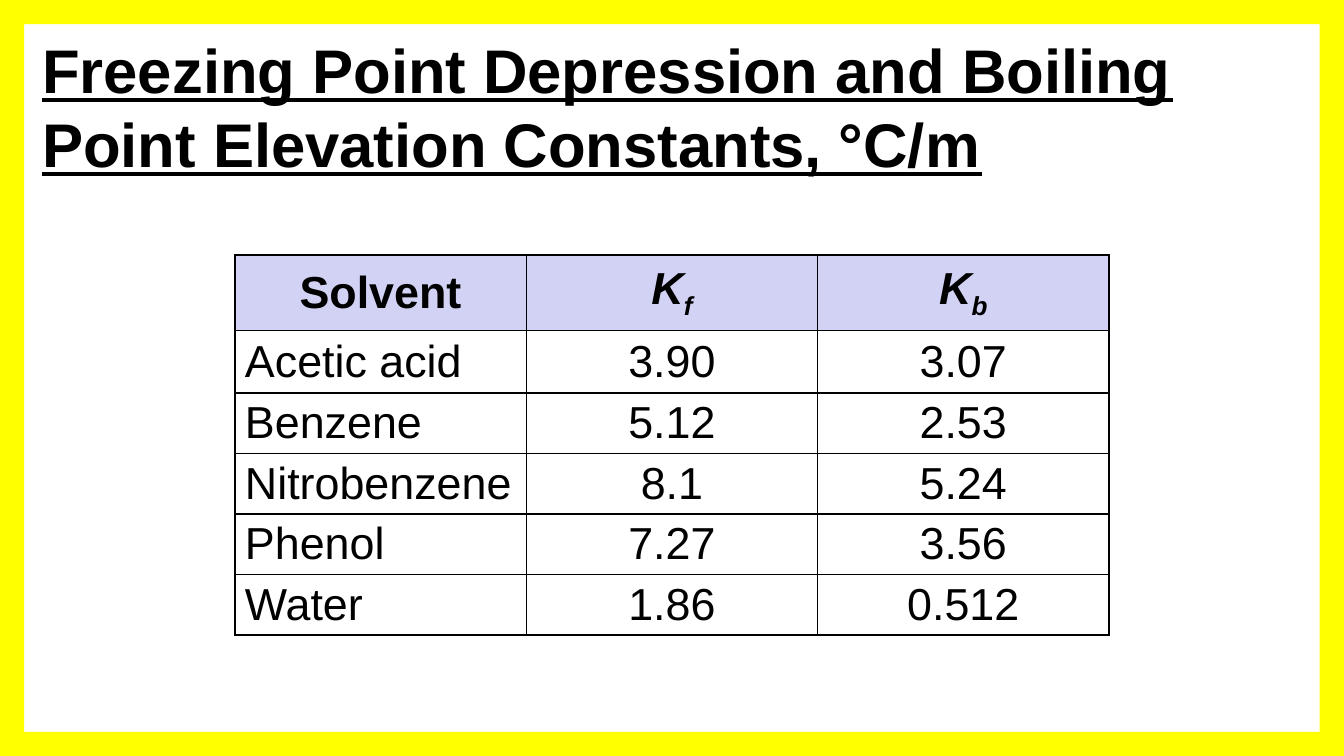
"""Build the slide of freezing and boiling point constants."""
import pptx
import pptx.util
import pptx.dml.color
import pptx.enum.shapes
import pptx.enum.text
import pptx.oxml
import pptx.oxml.ns
from lxml import etree

TITLE = "Freezing Point Depression and Boiling Point Elevation Constants, °C/m"
HEADER = [("Solvent", ""), ("K", "f"), ("K", "b")]
SOLVENTS = [
    ("Acetic acid", "3.90", "3.07"),
    ("Benzene", "5.12", "2.53"),
    ("Nitrobenzene", "8.1", "5.24"),
    ("Phenol", "7.27", "3.56"),
    ("Water", "1.86", "0.512"),
]
COLORS = {"text": "000000", "header": "D2D2F4", "frame": "FFFF00"}
FONT = "Arial"
WIDTH, HEIGHT = 13.33, 7.5
COLUMN_WIDTH = 2.89
ROW_HEIGHTS = [0.75, 0.62] + [0.6] * 4
TABLE_TOP = 2.53

Inches, Pt = pptx.util.Inches, pptx.util.Pt
MIDDLE = pptx.enum.text.MSO_ANCHOR.MIDDLE
CENTER = pptx.enum.text.PP_ALIGN.CENTER
LEFT = pptx.enum.text.PP_ALIGN.LEFT


def color(name):
    return pptx.dml.color.RGBColor.from_string(COLORS[name])


def style_run(run, size, bold=False):
    run.font.name, run.font.size, run.font.bold = FONT, Pt(size), bold
    run.font.color.rgb = color("text")


def add_borders(cell):
    properties = cell._tc.get_or_add_tcPr()
    for position, side in enumerate(("lnL", "lnR", "lnT", "lnB")):
        line = pptx.oxml.parse_xml(
            f'<a:{side} {pptx.oxml.ns.nsdecls("a")} w="{Pt(1)}"><a:solidFill>'
            f'<a:srgbClr val="{COLORS["text"]}"/></a:solidFill></a:{side}>')
        properties.insert(position, line)


def fill_cell(cell, texts, is_header, alignment):
    cell.vertical_anchor = MIDDLE
    if is_header:
        cell.fill.solid()
        cell.fill.fore_color.rgb = color("header")
    else:
        cell.fill.background()
    add_borders(cell)
    paragraph = cell.text_frame.paragraphs[0]
    paragraph.alignment = alignment
    spacing = etree.SubElement(paragraph._p.get_or_add_pPr(), pptx.oxml.ns.qn("a:spcBef"))
    etree.SubElement(spacing, pptx.oxml.ns.qn("a:spcPct")).set("val", "20000")
    symbol, subscript = texts
    for text in filter(None, texts):
        run = paragraph.add_run()
        run.text = text
        style_run(run, 32, bold=is_header)
        run.font.italic = bool(subscript)
    if subscript:
        run.font._element.set("baseline", "-25000")


def add_constants_table(slide):
    rows = [HEADER] + [[(text, "") for text in row] for row in SOLVENTS]
    table_width = COLUMN_WIDTH * len(HEADER)
    table = slide.shapes.add_table(
        len(rows), len(HEADER), Inches((WIDTH - table_width) / 2), Inches(TABLE_TOP),
        Inches(table_width), Inches(sum(ROW_HEIGHTS))).table
    for column in table.columns:
        column.width = Inches(COLUMN_WIDTH)
    for row_index, row in enumerate(rows):
        table.rows[row_index].height = Inches(ROW_HEIGHTS[row_index])
        for column_index, texts in enumerate(row):
            is_header = row_index == 0
            alignment = CENTER if is_header or column_index else LEFT
            fill_cell(table.cell(row_index, column_index), texts, is_header, alignment)


def add_frame(slide):
    frame = slide.shapes.add_shape(
        pptx.enum.shapes.MSO_SHAPE.FRAME, 0, 0, Inches(WIDTH), Inches(HEIGHT))
    frame.adjustments[0] = 0.032
    frame.shadow.inherit = False
    frame.fill.solid()
    frame.fill.fore_color.rgb = color("frame")
    frame.line.fill.background()


def add_title(slide):
    box = slide.shapes.add_textbox(Inches(0.32), Inches(0.63), Inches(12.35), Inches(0.84))
    box.text_frame.word_wrap = True
    box.text_frame.vertical_anchor = MIDDLE
    box.text_frame.text = TITLE
    run = box.text_frame.paragraphs[0].runs[0]
    style_run(run, 44, bold=True)
    run.font.underline = True


def main():
    presentation = pptx.Presentation()
    presentation.slide_width, presentation.slide_height = Inches(WIDTH), Inches(HEIGHT)
    slide = presentation.slides.add_slide(presentation.slide_layouts[6])
    add_constants_table(slide)
    add_frame(slide)
    add_title(slide)
    presentation.save("out.pptx")


if __name__ == "__main__":
    main()
